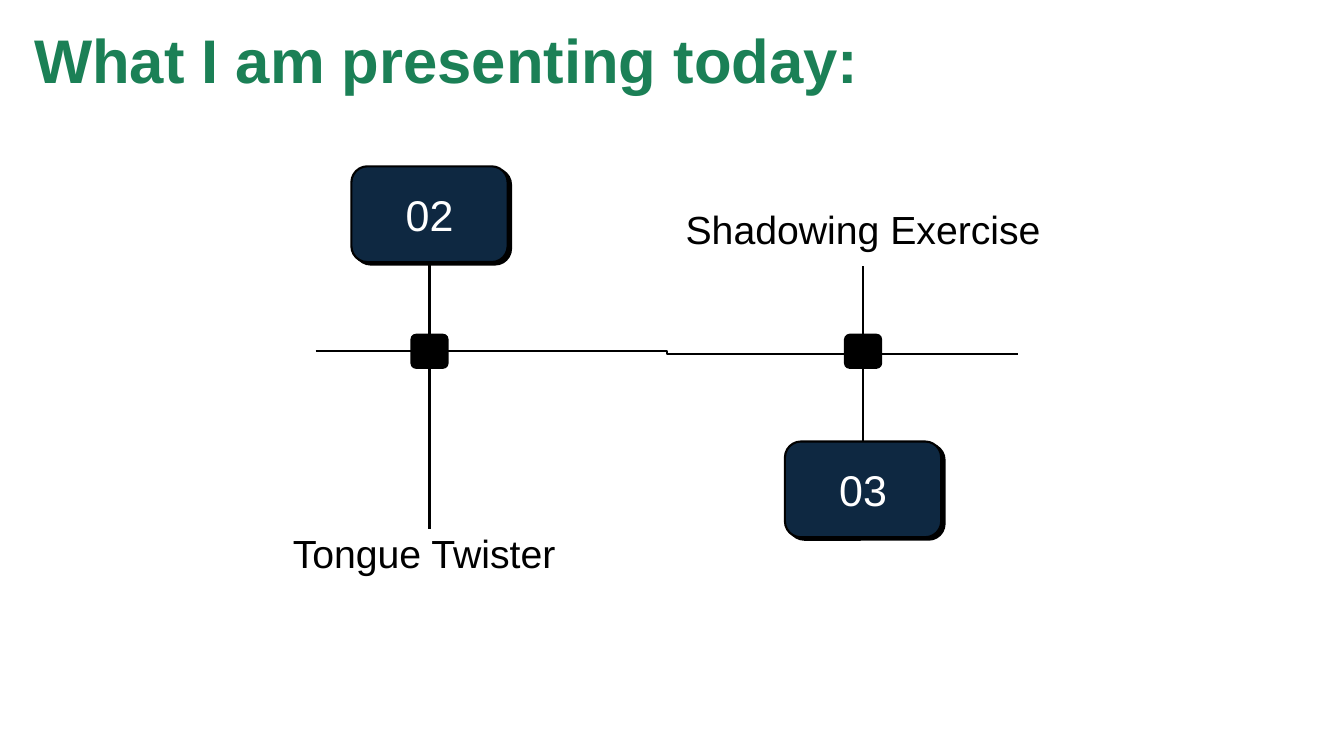
"""Build the agenda slide: a two-step timeline with numbered cards and labels."""
import lxml.etree
import pptx
import pptx.dml.color
import pptx.enum.shapes
import pptx.enum.text
import pptx.oxml
import pptx.oxml.ns
import pptx.util

Inches = pptx.util.Inches
Pt = pptx.util.Pt
RGBColor = pptx.dml.color.RGBColor
ANCHOR = pptx.enum.text.MSO_ANCHOR
ALIGN = pptx.enum.text.PP_ALIGN
CONNECTOR = pptx.enum.shapes.MSO_CONNECTOR
ROUNDED = pptx.enum.shapes.MSO_SHAPE.ROUNDED_RECTANGLE

GREEN = RGBColor(0x1B, 0x80, 0x56)
NAVY = RGBColor(0x0E, 0x28, 0x41)
BLACK = RGBColor(0, 0, 0)
WHITE = RGBColor(0xFF, 0xFF, 0xFF)

CARD_WIDTH, CARD_HEIGHT = 1.55, 0.95
MARKER_WIDTH, MARKER_HEIGHT, MARKER_TOP = 0.38, 0.35, 3.31
TOP, BOTTOM = 0, 2

HARD_SHADOW = (
    f'<a:effectLst {pptx.oxml.ns.nsdecls("a")}>'
    '<a:outerShdw blurRad="0" dist="38100" dir="2160000" algn="tl" rotWithShape="0">'
    '<a:srgbClr val="000000"/></a:outerShdw></a:effectLst>'
)


def write_text(shape, text, size, color, align, anchor, bold=False):
    """Fill a shape with one formatted paragraph."""
    frame = shape.text_frame
    frame.word_wrap = True
    frame.vertical_anchor = anchor
    frame.margin_left = frame.margin_right = Inches(0.13)
    frame.margin_top = frame.margin_bottom = Inches(0.13)
    paragraph = frame.paragraphs[0]
    paragraph.text = text
    paragraph.alignment = align
    paragraph.font.name = "Arial"
    paragraph.font.size = Pt(size)
    paragraph.font.bold = bold
    paragraph.font.color.rgb = color


def add_title(slide, text):
    """Add the slide heading."""
    box = slide.shapes.add_textbox(Inches(0.21), Inches(0.09), Inches(10), Inches(2.61))
    write_text(box, text, 44, GREEN, ALIGN.LEFT, ANCHOR.TOP, bold=True)


def add_label(slide, center, top, width, height, text):
    """Add a bottom-anchored label centred on a timeline position."""
    box = slide.shapes.add_textbox(
        Inches(center - width / 2), Inches(top), Inches(width), Inches(height))
    write_text(box, text, 28, BLACK, ALIGN.CENTER, ANCHOR.BOTTOM)


def add_rounded(slide, center, top, width, height, fill):
    """Add a filled rounded rectangle centred on a timeline position."""
    shape = slide.shapes.add_shape(
        ROUNDED, Inches(center - width / 2), Inches(top), Inches(width), Inches(height))
    shape.shadow.inherit = False
    shape.fill.solid()
    shape.fill.fore_color.rgb = fill
    shape.line.fill.background()
    return shape


def add_card(slide, center, top, number):
    """Add a numbered card with a hard shadow."""
    card = add_rounded(slide, center, top, CARD_WIDTH, CARD_HEIGHT, NAVY)
    card.line.color.rgb = BLACK
    card.line.width = Pt(1.5)
    properties = card._element.spPr
    properties.remove(properties.find(pptx.oxml.ns.qn("a:effectLst")))
    properties.append(pptx.oxml.parse_xml(HARD_SHADOW))
    write_text(card, number, 30.7, WHITE, ALIGN.CENTER, ANCHOR.MIDDLE)
    return card


def add_marker(slide, center):
    """Add a timeline marker."""
    return add_rounded(slide, center, MARKER_TOP, MARKER_WIDTH, MARKER_HEIGHT, BLACK)


def add_line(slide, start, end, kind=CONNECTOR.STRAIGHT):
    """Add a black connector between two points."""
    line = slide.shapes.add_connector(kind, *map(Inches, start + end))
    line.line.color.rgb = BLACK
    line.line.width = Pt(1.5)
    lxml.etree.SubElement(line._element.spPr, pptx.oxml.ns.qn("a:effectLst"))
    return line


def add_step(slide, center, number, card_top, label, label_end):
    """Add a marker joined to its card on one side and its label on the other."""
    card = add_card(slide, center, card_top, number)
    marker = add_marker(slide, center)
    card_above = card_top < MARKER_TOP
    card_side, label_side = (TOP, BOTTOM) if card_above else (BOTTOM, TOP)
    edges = {TOP: MARKER_TOP, BOTTOM: MARKER_TOP + MARKER_HEIGHT}
    card_edge = card_top + CARD_HEIGHT if card_above else card_top

    card_line = add_line(slide, (center, edges[card_side]), (center, card_edge))
    card_line.begin_connect(marker, card_side)
    card_line.end_connect(card, label_side)
    label_line = add_line(slide, (center, edges[label_side]), (center, label_end))
    label_line.begin_connect(marker, label_side)
    add_label(slide, center, *label)


def main():
    """Create and save the presentation."""
    presentation = pptx.Presentation()
    presentation.slide_width = Inches(13.33)
    presentation.slide_height = Inches(7.5)
    slide = presentation.slides.add_slide(presentation.slide_layouts[6])

    add_title(slide, "What I am presenting today:")
    add_line(slide, (3.13, 3.48), (10.1, 3.51), CONNECTOR.ELBOW)
    add_step(slide, 4.26, "02", 1.65, (4.37, 3.77, 1.48, "Tongue Twister "), 5.25)
    add_step(slide, 8.56, "03", 4.38, (1.73, 4.76, 0.9, "Shadowing Exercise"), 2.64)

    presentation.save("out.pptx")


if __name__ == "__main__":
    main()
